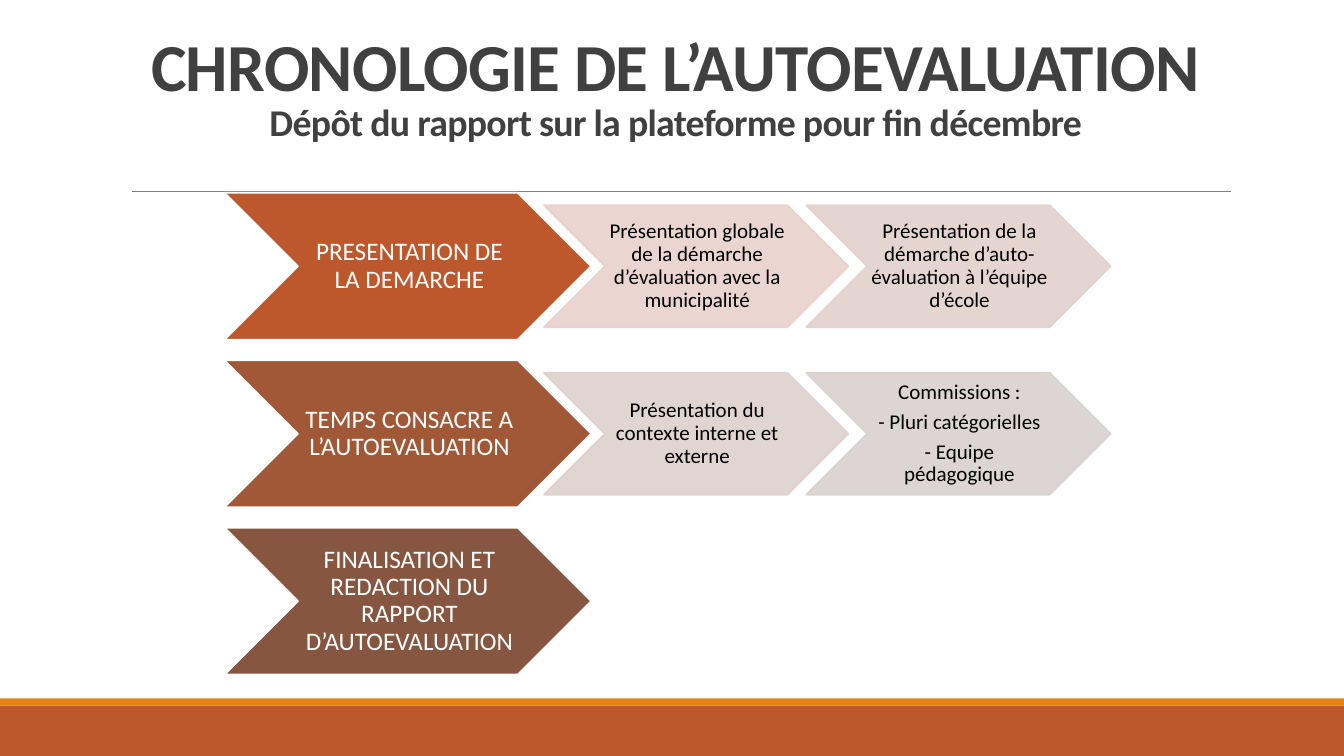
from dataclasses import dataclass

from lxml.etree import SubElement
from pptx import Presentation
from pptx.dml.color import RGBColor
from pptx.enum.shapes import MSO_CONNECTOR, MSO_SHAPE
from pptx.enum.text import MSO_ANCHOR, PP_ALIGN
from pptx.oxml.ns import qn
from pptx.util import Cm, Pt

CHEVRON = MSO_SHAPE.CHEVRON
RECTANGLE = MSO_SHAPE.RECTANGLE
STRAIGHT = MSO_CONNECTOR.STRAIGHT
CENTER = PP_ALIGN.CENTER
MIDDLE = MSO_ANCHOR.MIDDLE
BOTTOM = MSO_ANCHOR.BOTTOM

FONT = "Calibri"
SLIDE_W, SLIDE_H = 33.87, 19.05
FIRST_TOP, ROW_STEP = 4.86, 4.22
STAGE_LEFT, STAGE_W, STAGE_H = 5.66, 9.24, 3.7
STEP_LEFT, STEP_W, STEP_H, STEP_PITCH = 13.71, 7.67, 3.07, 6.61


@dataclass
class Band:
    top: float
    height: float
    color: str


@dataclass
class Step:
    lines: list[str]
    color: str


@dataclass
class Stage:
    text: str
    color: str
    steps: list[Step]


BANDS = [Band(17.78, 1.27, "BD582C"), Band(17.6, 0.18, "E48312")]

STAGES = [
    Stage("PRESENTATION DE LA DEMARCHE", "BD582C", [
        Step(["Présentation globale de la démarche d’évaluation avec la municipalité"], "E8D1CD"),
        Step(["Présentation de la démarche d’auto-évaluation à l’équipe d’école"], "E3D1CD"),
    ]),
    Stage("TEMPS CONSACRE A L’AUTOEVALUATION", "A05837", [
        Step(["Présentation du contexte interne et externe"], "DED1CE"),
        Step(["Commissions :", "- Pluri catégorielles", "- Equipe pédagogique"], "D9D1CF"),
    ]),
    Stage("FINALISATION ET REDACTION DU RAPPORT D’AUTOEVALUATION", "865640", []),
]


def rgb(color: str) -> RGBColor:
    return RGBColor.from_string(color)


def add_run(p, text: str, size: float, color: str, bold: bool = False):
    r = p.add_run()
    r.text = text
    r.font.name = FONT
    r.font.size = Pt(size)
    r.font.bold = bold
    r.font.color.rgb = rgb(color)
    return r


def add_band(s, band: Band) -> None:
    sp = s.shapes.add_shape(RECTANGLE, 0, Cm(band.top), Cm(SLIDE_W), Cm(band.height))
    sp.shadow.inherit = False
    sp.fill.solid()
    sp.fill.fore_color.rgb = rgb(band.color)
    sp.line.fill.background()


def add_rule(s) -> None:
    line = s.shapes.add_connector(STRAIGHT, Cm(3.33), Cm(4.83), Cm(31.01), Cm(4.83))
    line.line.color.rgb = rgb("808080")
    line.line.width = Pt(0.5)
    SubElement(line._element.spPr, qn("a:effectLst"))


def add_title(s) -> None:
    tf = s.shapes.add_textbox(Cm(3.05), Cm(0.79), Cm(27.94), Cm(2.97)).text_frame
    tf.word_wrap = True
    tf.vertical_anchor = BOTTOM
    p = tf.paragraphs[0]
    p.alignment = CENTER
    p.line_spacing = 0.85
    heading = add_run(p, "CHRONOLOGIE DE L’AUTOEVALUATION", 48, "404040", True)
    p.add_line_break()
    subtitle = add_run(
        p, "Dépôt du rapport sur la plateforme pour fin décembre", 27, "404040", True)
    for r in (heading, subtitle):
        r.font._element.set("spc", "-50")


def add_chevron(s, left: float, top: float, width: float, height: float,
                lines: list[str], size: float, fill: str, line: str,
                text_color: str, inset: float):
    sp = s.shapes.add_shape(CHEVRON, Cm(left), Cm(top), Cm(width), Cm(height))
    sp.shadow.inherit = False
    sp.fill.solid()
    sp.fill.fore_color.rgb = rgb(fill)
    sp.line.color.rgb = rgb(line)
    sp.line.width = Pt(1.25)
    tf = sp.text_frame
    tf.word_wrap = True
    tf.vertical_anchor = MIDDLE
    tf.margin_left, tf.margin_right = Cm(inset), 0
    tf.margin_top = tf.margin_bottom = Cm(0.03)
    for i, text in enumerate(lines):
        p = tf.add_paragraph() if i else tf.paragraphs[0]
        p.alignment = CENTER
        p.line_spacing = 0.9
        p.space_after = Pt(size * 0.35)
        add_run(p, text, size, text_color)
    return sp


def add_stage(s, stage: Stage, top: float) -> None:
    add_chevron(s, STAGE_LEFT, top, STAGE_W, STAGE_H, [stage.text], 18,
                stage.color, "FFFFFF", "FFFFFF", 0.08)
    step_top = top + (STAGE_H - STEP_H) / 2
    for i, step in enumerate(stage.steps):
        sp = add_chevron(s, STEP_LEFT + i * STEP_PITCH, step_top, STEP_W, STEP_H,
                         step.lines, 15, step.color, step.color, "000000", 0.05)
        for color in sp._element.spPr.iter(qn("a:srgbClr")):
            SubElement(color, qn("a:alpha"), val="90000")


def main() -> None:
    prs = Presentation()
    prs.slide_width, prs.slide_height = Cm(SLIDE_W), Cm(SLIDE_H)
    s = prs.slides.add_slide(prs.slide_layouts[6])
    for band in BANDS:
        add_band(s, band)
    add_rule(s)
    add_title(s)
    for i, stage in enumerate(STAGES):
        add_stage(s, stage, FIRST_TOP + i * ROW_STEP)
    prs.save("out.pptx")


if __name__ == "__main__":
    main()
